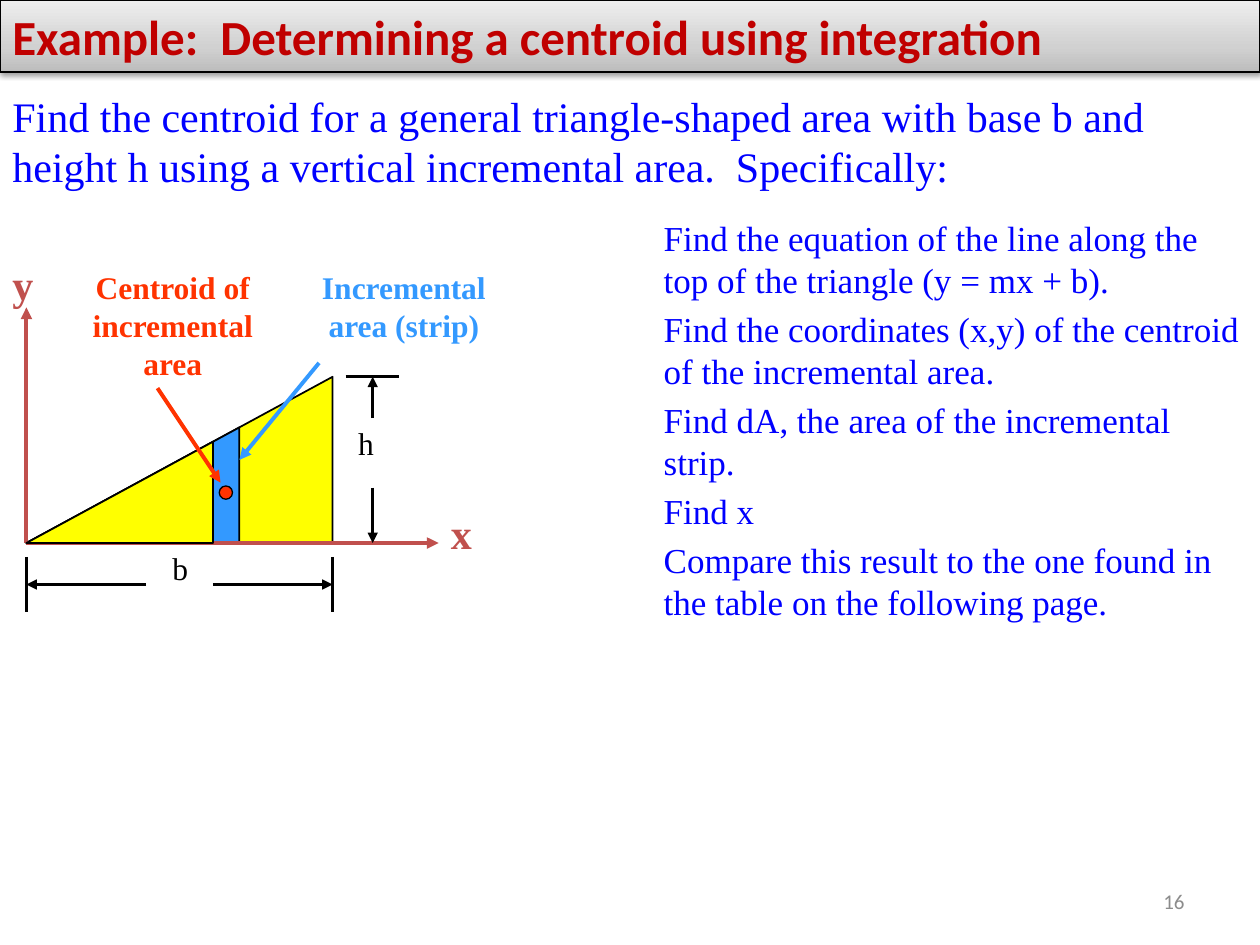
from copy import deepcopy
from pptx import Presentation
from pptx.dml.color import RGBColor
from pptx.enum.shapes import MSO_CONNECTOR, MSO_SHAPE
from pptx.enum.text import MSO_ANCHOR, PP_ALIGN
from pptx.oxml import parse_xml
from pptx.oxml.ns import nsdecls
from pptx.util import Pt

STRAIGHT = MSO_CONNECTOR.STRAIGHT
RECT, OVAL, WEDGE = MSO_SHAPE.RECTANGLE, MSO_SHAPE.OVAL, MSO_SHAPE.RIGHT_TRIANGLE
TOP, MID = MSO_ANCHOR.TOP, MSO_ANCHOR.MIDDLE
LEFT, CENTER, RIGHT = PP_ALIGN.LEFT, PP_ALIGN.CENTER, PP_ALIGN.RIGHT


class Theme:
    ink = RGBColor.from_string("000000")
    body = RGBColor.from_string("0000FF")
    head = RGBColor.from_string("C00000")
    axis = RGBColor.from_string("C0504D")
    area = RGBColor.from_string("FFFF00")
    strip = RGBColor.from_string("3399FF")
    dot = RGBColor.from_string("FF3300")
    page = RGBColor.from_string("8C8C8C")
    bar = [(0, "BDBDBD"), (0.35, "D1D1D1"), (1, "EEEEEE")]
    serif, sans = "Times New Roman", "Calibri"
    title, lead, item, label, small = 28, 24, 20, 18, 12
    thick, dim, edge, thin = 2.25, 1.5, 1, 0.75


deck = Presentation()
deck.slide_width, deck.slide_height = Pt(720), Pt(540)
slide = deck.slides.add_slide(deck.slide_layouts[6])
shapes = slide.shapes


def form(kind, box, fill, width):
    item = shapes.add_shape(kind, *map(Pt, box))
    item.shadow.inherit = False
    item.fill.solid()
    item.fill.fore_color.rgb = fill
    item.line.color.rgb = Theme.ink
    item.line.width = Pt(width)
    return item


def line(start, end, color=Theme.ink, width=Theme.dim, arrow=True):
    item = shapes.add_connector(STRAIGHT, *map(Pt, start + end))
    item.line.color.rgb = color
    item.line.width = Pt(width)
    if arrow:
        tail = parse_xml(f'<a:tailEnd {nsdecls("a")} type="triangle"/>')
        item.line._get_or_add_ln().append(tail)
    item._element.spPr.append(parse_xml(f'<a:effectLst {nsdecls("a")}/>'))


left, base = 15.1, 310.3
wide, high = 175, 95
right, peak = left + wide, base - high

wedges = [
    (wide, Theme.area),
    (121.7, Theme.strip),
    (106.6, Theme.area),
]
for run, fill in wedges:
    if run == wedges[-1][0]:
        for end in [(left, 175.7), (250.6, base)]:
            line((left, base), end, Theme.axis, Theme.thick)
    rise = high * run / wide
    wedge = form(WEDGE, (left, base - rise, run, rise), fill, Theme.edge)
    wedge._element.spPr.xfrm.set("flipH", "1")

mark, rule = 213, 334
for start, end in [
    ((mark, 239), (mark, peak)),
    ((mark, 278.6), (mark, base)),
    ((83.5, rule), (left, rule)),
    ((121.7, rule), (right, rule)),
]:
    line(start, end)
for start, end in [
    ((197.5, peak), (228, peak)),
    ((left, 318.2), (left, 349.8)),
    ((right, 318.2), (right, 349.8)),
]:
    line(start, end, arrow=False)

form(OVAL, (125.3, 277.7, 7.6, 7.6), Theme.dot, Theme.thin)
line((182.3, 207.4), (136.8, 262.8), Theme.strip, Theme.thick)
line((90, 221.8), (126, 275.8), Theme.dot, Theme.thick)

bar = form(RECT, (0, 0, 720, 41.2), Theme.page, Theme.thin)
bar.fill.gradient()
bar.fill.gradient_angle = 90
stops = bar._element.spPr.xpath("./a:gradFill/a:gsLst")[0]
stops.append(deepcopy(stops[0]))
for stop, (place, color) in zip(bar.fill.gradient_stops, Theme.bar):
    stop.position = place
    stop.color.rgb = RGBColor.from_string(color)
bar._element.spPr.xpath("./a:effectLst")[0].append(parse_xml(
    f'<a:outerShdw {nsdecls("a")} blurRad="{Pt(3.1)}" dist="{Pt(1.6)}" '
    'dir="5400000" rotWithShape="0"><a:srgbClr val="000000">'
    '<a:alpha val="38000"/></a:srgbClr></a:outerShdw>'))

lead = ("Find the centroid for a general triangle-shaped area with base b "
        "and height h using a vertical incremental area.  Specifically:")
tasks = [
    "Find the equation of the line along the top of the triangle (y = mx + b).",
    "Find the coordinates (x,y) of the centroid of the incremental area.",
    "Find dA, the area of the incremental strip.",
    "Find x",
    "Compare this result to the one found in the table on the following page.",
]
plain = dict(name=Theme.serif, size=Pt(Theme.label), bold=False,
             color=Theme.ink)
bold = plain | dict(bold=True)
axis = bold | dict(size=Pt(Theme.lead), color=Theme.axis)
blue = plain | dict(color=Theme.body)
head = dict(name=Theme.sans, size=Pt(Theme.title), bold=True, color=Theme.head)
page = dict(name=Theme.sans, size=Pt(Theme.small), bold=False, color=Theme.page)

texts = [
    (None, ["Example:  Determining a centroid using integration"],
     head, LEFT, MID, True),
    ((0, 48.2, 720, 84.2), [lead], blue | dict(size=Pt(Theme.lead)),
     LEFT, TOP, True),
    ((372.2, 120.2, 347.8, 252), tasks, blue | dict(size=Pt(Theme.item)),
     LEFT, TOP, True),
    ((197.5, 239, 29.5, 38.2), ["h"], plain, LEFT, TOP, False),
    ((91.4, 310.3, 29.5, 38.2), ["b"], plain, LEFT, TOP, False),
    ((0, 144, 26.6, 36), ["y"], axis, LEFT, TOP, False),
    ((250.6, 286.6, 26.6, 36), ["x"], axis, LEFT, TOP, False),
    ((149.8, 149.8, 162, 51), ["Incremental", "area (strip)"],
     bold | dict(color=Theme.strip), CENTER, TOP, True),
    ((41.8, 149.8, 113.8, 72.7), ["Centroid of incremental", "area"],
     bold | dict(color=Theme.dot), CENTER, TOP, True),
    ((516.2, 500.4, 167.8, 28.8), ["16"], page, RIGHT, MID, True),
]
for box, words, style, align, anchor, wrap in texts:
    host = shapes.add_textbox(*map(Pt, box)) if box else bar
    frame = host.text_frame
    frame.word_wrap = wrap
    frame.vertical_anchor = anchor
    frame.text = "\n".join(words)
    for para in frame.paragraphs:
        para.alignment = align
        if words is tasks:
            para.space_before = Pt(4)
        font = para.runs[0].font
        for key, value in style.items():
            if key == "color":
                font.color.rgb = value
            else:
                setattr(font, key, value)

deck.save("out.pptx")
